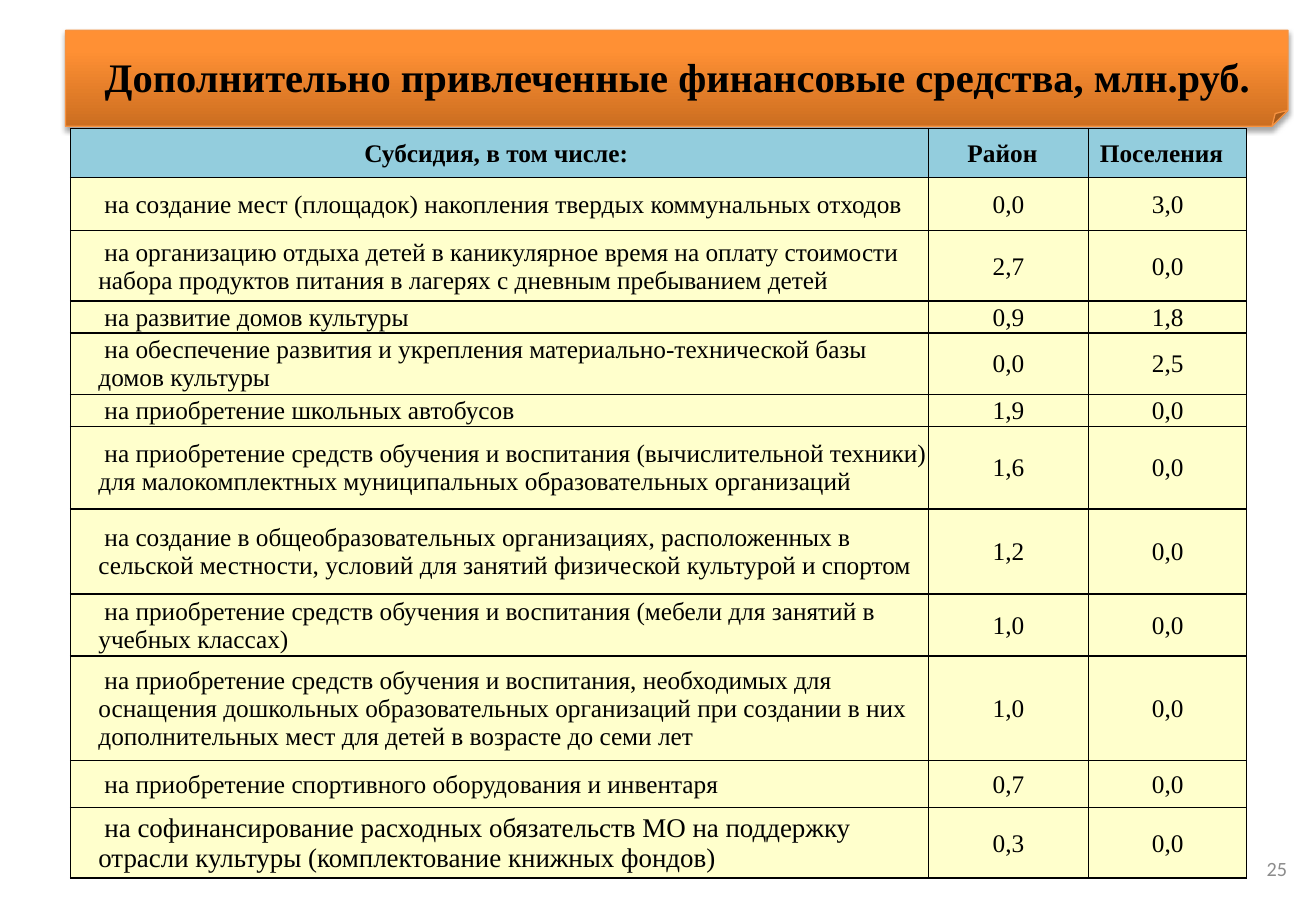
import copy
import dataclasses
import typing

import pptx
import pptx.dml.color
import pptx.enum.shapes
import pptx.enum.text
import pptx.oxml
import pptx.oxml.ns
import pptx.util

Inches = pptx.util.Inches
Align = pptx.enum.text.PP_ALIGN
MIDDLE = pptx.enum.text.MSO_ANCHOR.MIDDLE


@dataclasses.dataclass(frozen=True)
class Theme:
    serif: str = "Times New Roman"
    sans: str = "Calibri"
    ink: str = "000000"
    page_number: str = "8C8C8C"
    header_fill: str = "93CDDD"
    body_fill: str = "FFFFCC"
    banner_line: str = "F69240"
    banner_stops: tuple[tuple[float, str], ...] = (
        (0, "CC6E20"), (0.8, "FF9034"), (1, "FF9136"))
    title_size: float = 24
    table_size: float = 15
    large_size: float = 16
    page_size: float = 12


THEME = Theme()


@dataclasses.dataclass(frozen=True)
class Subsidy:
    purpose: str
    district: str
    settlements: str
    height: float
    size: float = THEME.table_size


@dataclasses.dataclass(frozen=True)
class HeaderColumn:
    label: str
    width: float
    right_margin: float


COLUMNS = (
    HeaderColumn("Субсидия, в том числе:", 7.06, 0.06),
    HeaderColumn("Район", 1.32, 0.11),
    HeaderColumn("Поселения", 1.3, 0.11),
)
HEADER_HEIGHT = 0.4
SUBSIDIES = (
    Subsidy("на создание мест (площадок) накопления твердых коммунальных отходов",
            "0,0", "3,0", 0.44),
    Subsidy("на организацию отдыха детей в каникулярное время на оплату стоимости "
            "набора продуктов питания в лагерях с дневным пребыванием детей",
            "2,7", "0,0", 0.58),
    Subsidy("на развитие домов культуры", "0,9", "1,8", 0.25),
    Subsidy("на обеспечение развития и укрепления материально-технической базы "
            "домов культуры", "0,0", "2,5", 0.5),
    Subsidy("на приобретение школьных автобусов", "1,9", "0,0", 0.26),
    Subsidy("на приобретение средств обучения и воспитания (вычислительной техники) "
            "для малокомплектных муниципальных образовательных организаций",
            "1,6", "0,0", 0.68),
    Subsidy("на создание в общеобразовательных организациях, расположенных в "
            "сельской местности, условий для занятий физической культурой и спортом",
            "1,2", "0,0", 0.7),
    Subsidy("на приобретение средств обучения и воспитания (мебели для занятий в "
            "учебных классах)", "1,0", "0,0", 0.5),
    Subsidy("на приобретение средств обучения и воспитания, необходимых для "
            "оснащения дошкольных образовательных организаций при создании в них "
            "дополнительных мест для детей в возрасте до семи лет",
            "1,0", "0,0", 0.86),
    Subsidy("на приобретение спортивного оборудования и инвентаря",
            "0,7", "0,0", 0.39),
    Subsidy("на софинансирование расходных обязательств МО на поддержку "
            "отрасли культуры (комплектование книжных фондов)",
            "0,3", "0,0", 0.58, THEME.large_size),
)


def rgb(value: str) -> pptx.dml.color.RGBColor:
    return pptx.dml.color.RGBColor.from_string(value)


def apply(target: typing.Any, values: dict[str, typing.Any]) -> None:
    """Set each named attribute on the target."""
    for name, value in values.items():
        setattr(target, name, value)


def write(frame: typing.Any, text: str, size: float, align: Align, bold: bool = False,
          color: str = THEME.ink, font: str = THEME.serif) -> typing.Any:
    frame.text = text
    paragraph = frame.paragraphs[0]
    paragraph.alignment = align
    run_font = paragraph.runs[0].font
    apply(run_font, {"size": pptx.util.Pt(size), "name": font, "bold": bold})
    run_font.color.rgb = rgb(color)
    return paragraph


def place(shape: typing.Any, left: float, top: float, width: float, height: float) -> None:
    apply(shape, {"left": Inches(left), "top": Inches(top),
                  "width": Inches(width), "height": Inches(height)})


def add_page_number(slide: typing.Any) -> None:
    box = slide.shapes.add_textbox(Inches(10.05), Inches(6.95), Inches(0.64), Inches(0.4))
    apply(box.text_frame, {"word_wrap": True, "vertical_anchor": MIDDLE})
    write(box.text_frame, "25", THEME.page_size, Align.RIGHT,
          color=THEME.page_number, font=THEME.sans)


def add_banner(slide: typing.Any) -> typing.Any:
    banner = slide.shapes.add_shape(
        pptx.enum.shapes.MSO_SHAPE.FOLDED_CORNER,
        Inches(0.54), Inches(0.25), Inches(10.06), Inches(0.79))
    banner.fill.gradient()
    banner.fill.gradient_angle = 90
    stop_list = banner.element.spPr.find(".//" + pptx.oxml.ns.qn("a:gsLst"))
    stop_list.insert(1, copy.deepcopy(stop_list[0]))
    for stop, (position, color) in zip(banner.fill.gradient_stops, THEME.banner_stops):
        stop.position = position
        stop.color.rgb = rgb(color)
    banner.line.color.rgb = rgb(THEME.banner_line)
    banner.line.width = pptx.util.Pt(0.75)
    banner.shadow.inherit = False
    effects = banner.element.spPr.find(pptx.oxml.ns.qn("a:effectLst"))
    effects.append(pptx.oxml.parse_xml(
        f'<a:outerShdw {pptx.oxml.ns.nsdecls("a")} blurRad="40000" dist="23000" '
        f'dir="5400000" rotWithShape="0"><a:srgbClr val="{THEME.ink}">'
        '<a:alpha val="35000"/></a:srgbClr></a:outerShdw>'))
    return banner


def format_title(title: typing.Any) -> None:
    place(title, 0.66, 0.38, 9.83, 0.5)
    apply(title.text_frame, {
        "word_wrap": True, "vertical_anchor": pptx.enum.text.MSO_ANCHOR.TOP,
        "auto_size": pptx.enum.text.MSO_AUTO_SIZE.SHAPE_TO_FIT_TEXT})
    write(title.text_frame, "Дополнительно привлеченные финансовые средства, млн.руб.",
          THEME.title_size, Align.CENTER, bold=True)


def format_cell(cell: typing.Any, fill: str, left: float = 0.01, right: float = 0.01) -> None:
    apply(cell, {"margin_left": Inches(left), "margin_right": Inches(right),
                 "margin_top": Inches(0.01), "margin_bottom": 0,
                 "vertical_anchor": MIDDLE})
    properties = cell._tc.get_or_add_tcPr()
    for side in "LRTB":
        properties.append(pptx.oxml.parse_xml(
            f'<a:ln{side} {pptx.oxml.ns.nsdecls("a")} w="12700"><a:solidFill>'
            f'<a:srgbClr val="{THEME.ink}"/></a:solidFill></a:ln{side}>'))
    cell.fill.solid()
    cell.fill.fore_color.rgb = rgb(fill)


def add_subsidy_table(slide: typing.Any) -> None:
    heights = [HEADER_HEIGHT, *(subsidy.height for subsidy in SUBSIDIES)]
    table = slide.shapes.add_table(
        len(heights), len(COLUMNS), Inches(0.58), Inches(1.06),
        Inches(sum(column.width for column in COLUMNS)), Inches(sum(heights))).table
    apply(table, {"first_row": False, "horz_banding": False})
    for row, height in zip(table.rows, heights):
        row.height = Inches(height)
    for index, column in enumerate(COLUMNS):
        table.columns[index].width = Inches(column.width)
        cell = table.cell(0, index)
        format_cell(cell, THEME.header_fill, right=column.right_margin)
        write(cell.text_frame, column.label, THEME.table_size, Align.CENTER, bold=True)
    for row_index, subsidy in enumerate(SUBSIDIES, start=1):
        cell = table.cell(row_index, 0)
        format_cell(cell, THEME.body_fill, left=0.23)
        paragraph = write(cell.text_frame, subsidy.purpose, subsidy.size, Align.LEFT)
        paragraph._p.get_or_add_pPr().set("indent", str(Inches(0.05)))
        for column_index, amount in enumerate((subsidy.district, subsidy.settlements), start=1):
            cell = table.cell(row_index, column_index)
            format_cell(cell, THEME.body_fill)
            write(cell.text_frame, amount, THEME.table_size, Align.CENTER)


def main() -> None:
    presentation = pptx.Presentation()
    apply(presentation, {"slide_width": Inches(10.83), "slide_height": Inches(7.5)})
    slide = presentation.slides.add_slide(presentation.slide_layouts[5])
    title = slide.shapes.title
    add_page_number(slide)
    banner = add_banner(slide)
    title.element.addprevious(banner.element)
    format_title(title)
    add_subsidy_table(slide)
    presentation.save("out.pptx")


if __name__ == "__main__":
    main()
